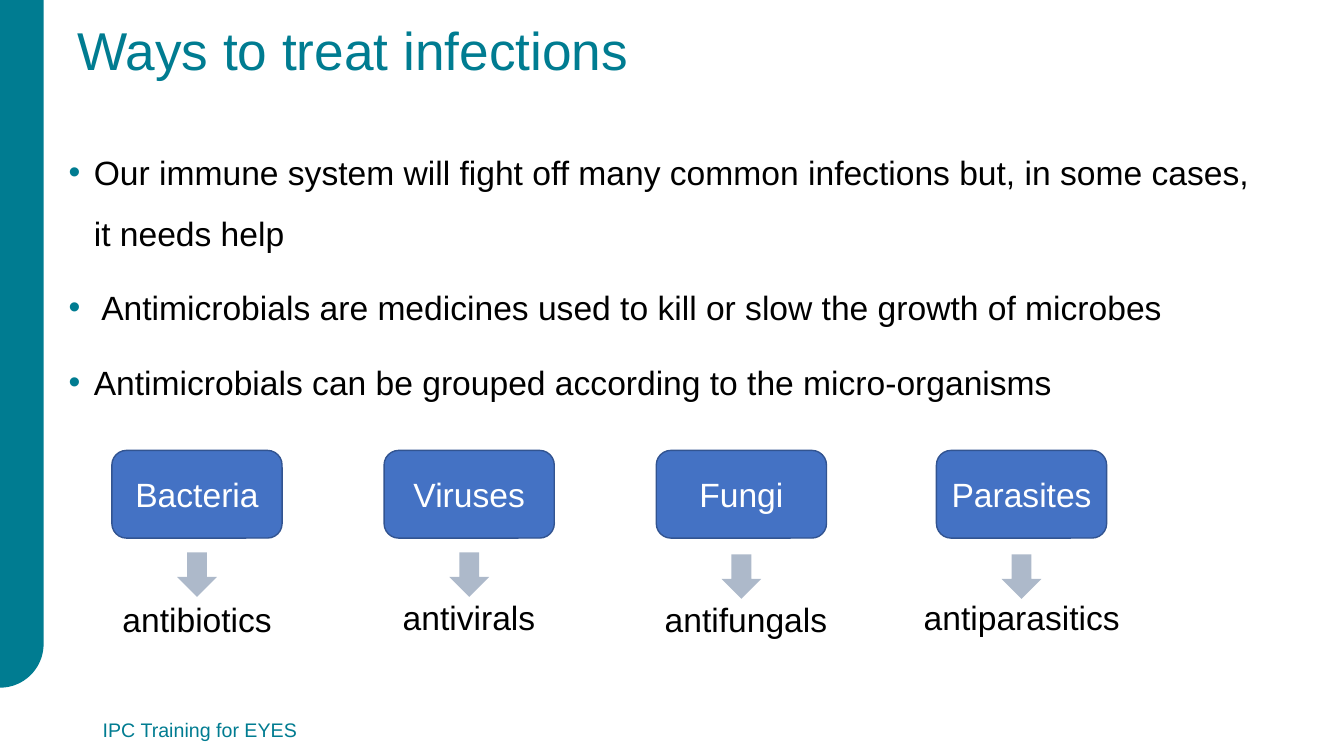
import math
from lxml import etree
from pptx import Presentation, util as u
from pptx.dml.color import RGBColor
from pptx.enum import shapes, text
from pptx.oxml import ns

COLORS = {"teal": "007C91", "black": "000000", "white": "FFFFFF",
          "blue": "4472C4", "navy": "325491", "grey": "ADB9CA"}


def color(name):
    return RGBColor.from_string(COLORS[name])


def write(box, lines, size, ink, anchor=text.MSO_ANCHOR.TOP, bullet=None, inset=0.25, **layout):
    frame = box.text_frame
    settings = {"word_wrap": True, "auto_size": text.MSO_AUTO_SIZE.NONE,
                "vertical_anchor": anchor, "margin_left": u.Cm(inset), "margin_right": u.Cm(inset)}
    for name, value in settings.items():
        setattr(frame, name, value)
    frame.text = "\n".join(lines)
    for number, para in enumerate(frame.paragraphs):
        if bullet:
            props = para._p.get_or_add_pPr()
            props.set("marL", str(u.Cm(0.635)))
            props.set("indent", str(-u.Cm(0.635)))
            tint = etree.SubElement(props, ns.qn("a:buClr"))
            etree.SubElement(tint, ns.qn("a:srgbClr"), val=COLORS["teal"])
            etree.SubElement(props, ns.qn("a:buFont"), typeface="Arial")
            etree.SubElement(props, ns.qn("a:buChar"), char=bullet)
            para.space_before = u.Pt(10 if number else 0)
        for name, value in layout.items():
            setattr(para, name, value)
        for span in para.runs:
            span.font.name = "Arial"
            span.font.size = u.Pt(size)
            span.font.color.rgb = color(ink)


deck = Presentation()
deck.slide_width, deck.slide_height = u.Cm(33.87), u.Cm(19.05)
page = deck.slides.add_slide(deck.slide_layouts[5])

radius, arc_top = 1.1, 16.23
arc = [(radius * math.cos(math.radians(angle)), arc_top + radius * math.sin(math.radians(angle)))
       for angle in range(0, 91, 3)]
outline = page.shapes.build_freeform(0, 0)
outline.add_line_segments([(u.Cm(x), u.Cm(y)) for x, y in [(radius, 0)] + arc])
band = outline.convert_to_shape()
band.shadow.inherit = False
band.fill.solid()
band.fill.fore_color.rgb = color("teal")
band.line.fill.background()

title = page.shapes.title
title.left, title.top, title.width, title.height = u.Cm(1.7), u.Cm(0.5), u.Cm(30.9), u.Cm(2.7)
write(title, ["Ways to treat infections"], 38, "teal",
      line_spacing=0.9, alignment=text.PP_ALIGN.LEFT)

body = page.shapes.add_textbox(u.Cm(1.48), u.Cm(3.2), u.Cm(30.9), u.Cm(13.06))
write(body, [
    "Our immune system will fight off many common infections but, in some cases, it needs help",
    " Antimicrobials are medicines used to kill or slow the growth of microbes",
    "Antimicrobials can be grouped according to the micro-organisms",
], 24, "black", bullet="•", line_spacing=1.5)

footer = page.shapes.add_textbox(u.Cm(2.34), u.Cm(17.88), u.Cm(27.8), u.Cm(1.02))
write(footer, ["IPC Training for EYES"], 14, "teal", anchor=text.MSO_ANCHOR.MIDDLE)

box_width, arrow_width, label_width = 4.29, 1, 5.7
groups = [
    ("Bacteria", "antibiotics", 2.82, 13.92, 4.97, 14.96),
    ("Viruses", "antivirals", 9.68, 13.92, 11.82, 14.92),
    ("Fungi", "antifungals", 16.54, 13.97, 18.8, 14.96),
    ("Parasites", "antiparasitics", 23.6, 13.97, 25.75, 14.92),
]
for microbe, medicine, left, arrow_top, label_center, label_top in groups:
    box = page.shapes.add_shape(shapes.MSO_SHAPE.ROUNDED_RECTANGLE,
                                u.Cm(left), u.Cm(11.35), u.Cm(box_width), u.Cm(2.21))
    arrow = page.shapes.add_shape(shapes.MSO_SHAPE.DOWN_ARROW,
                                  u.Cm(left + (box_width - arrow_width) / 2), u.Cm(arrow_top),
                                  u.Cm(arrow_width), u.Cm(1.12))
    for shape, paint in ((box, "blue"), (arrow, "grey")):
        shape.shadow.inherit = False
        shape.fill.solid()
        shape.fill.fore_color.rgb = color(paint)
    box.line.color.rgb = color("navy")
    box.line.width = u.Pt(1)
    arrow.line.fill.background()
    write(box, [microbe], 24, "white", anchor=text.MSO_ANCHOR.MIDDLE,
          alignment=text.PP_ALIGN.CENTER)
    label = page.shapes.add_textbox(u.Cm(label_center - label_width / 2), u.Cm(label_top),
                                    u.Cm(label_width), u.Cm(1.28))
    write(label, [medicine], 24, "black", inset=0, alignment=text.PP_ALIGN.CENTER)

deck.save("out.pptx")
